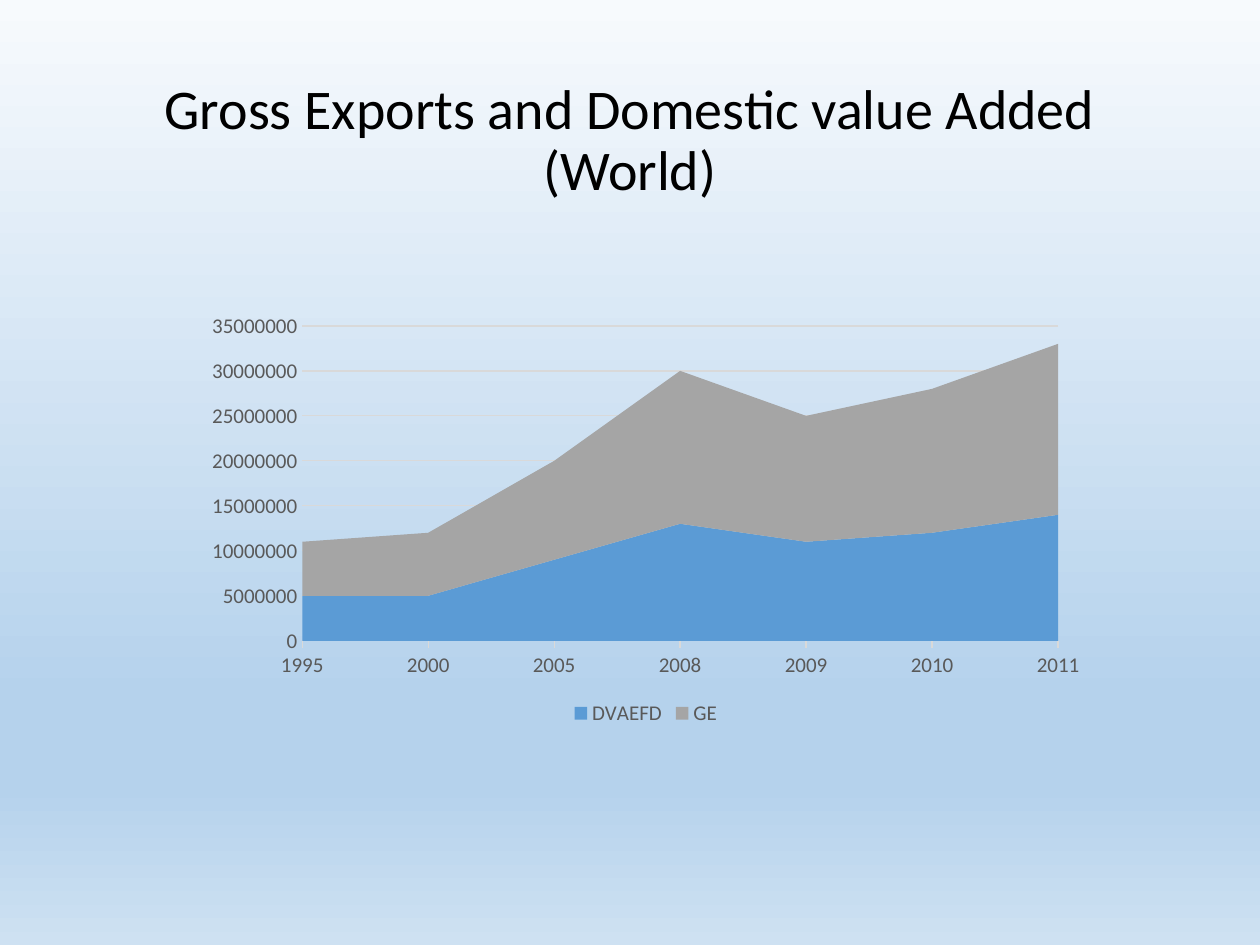
from lxml.etree import SubElement
from pptx import Presentation
from pptx.chart.data import CategoryChartData
from pptx.dml.color import RGBColor
from pptx.enum.chart import XL_CHART_TYPE as ChartType
from pptx.enum.chart import XL_LEGEND_POSITION as LegendPosition
from pptx.enum.chart import XL_TICK_MARK as TickMark
from pptx.enum.text import MSO_ANCHOR as Anchor
from pptx.enum.text import PP_ALIGN as Align
from pptx.oxml.ns import qn
from pptx.util import Inches, Pt

FONT = "Calibri"
LABEL_COLOR = "595959"
GRID_COLOR = "D9D9D9"
MILLION = 1_000_000
SKY_STOPS = [(0, "F7FAFD"), (74, "B5D2EC"), (83, "B5D2EC"), (100, "CEE1F2")]
YEARS = ["1995", "2000", "2005", "2008", "2009", "2010", "2011"]
EXPORTS = [
    ("DVAEFD", "5B9BD5", [5, 5, 9, 13, 11, 12, 14]),
    ("GE", "A5A5A5", [6, 7, 11, 17, 14, 16, 19]),
]


def color(hex_code):
    """Turn a hex string into a colour."""
    return RGBColor.from_string(hex_code)


def style_font(font, size, hex_code):
    """Set typeface, size and colour."""
    font.name = FONT
    font.size = Pt(size)
    font.color.rgb = color(hex_code)


def style_line(line, hex_code):
    """Give a chart line its colour and width."""
    line.color.rgb = color(hex_code)
    line.width = Pt(0.75)


def paint_background(slide, stops):
    """Fill the background with a gradient running from top to bottom."""
    fill = slide.background.fill
    fill.gradient()
    fill.gradient_angle = 270
    stop_list = slide.element.find(".//" + qn("a:gsLst"))
    for default_stop in list(stop_list):
        stop_list.remove(default_stop)
    for percent, hex_code in stops:
        stop = SubElement(stop_list, qn("a:gs"), pos=str(percent * 1000))
        SubElement(stop, qn("a:srgbClr"), val=hex_code)


def add_title(slide, text):
    """Add the centred slide title."""
    frame = slide.shapes.add_textbox(
        Inches(0.69), Inches(0.4), Inches(8.62), Inches(1.45)
    ).text_frame
    frame.word_wrap = True
    frame.vertical_anchor = Anchor.MIDDLE
    frame.text = text
    heading = frame.paragraphs[0]
    heading.alignment = Align.CENTER
    heading.line_spacing = 0.9
    style_font(heading.runs[0].font, 32, "000000")


def style_axes(chart):
    """Style both axes and start the areas on the value axis."""
    years, amounts = chart.category_axis, chart.value_axis
    for axis in (years, amounts):
        style_font(axis.tick_labels.font, 12, LABEL_COLOR)
        axis.minor_tick_mark = TickMark.NONE
    years.major_tick_mark = TickMark.OUTSIDE
    years.has_major_gridlines = False
    style_line(years.format.line, GRID_COLOR)
    amounts.major_tick_mark = TickMark.NONE
    amounts.minimum_scale = 0
    amounts.maximum_scale = 35 * MILLION
    amounts.major_unit = 5 * MILLION
    amounts.tick_labels.number_format = "General"
    amounts.tick_labels.number_format_is_linked = False
    amounts.format.line.fill.background()
    amounts.has_major_gridlines = True
    style_line(amounts.major_gridlines.format.line, GRID_COLOR)
    amounts._element.find(qn("c:crossBetween")).set("val", "midCat")


def add_exports_chart(slide):
    """Add the stacked area chart of exports."""
    data = CategoryChartData()
    data.categories = YEARS
    for name, _, millions in EXPORTS:
        data.add_series(name, [value * MILLION for value in millions])
    chart = slide.shapes.add_chart(
        ChartType.AREA_STACKED,
        Inches(1.54), Inches(2.42), Inches(7.17), Inches(3.38), data,
    ).chart
    style_font(chart.font, 10, "000000")
    chart.has_title = False
    chart.plots[0].vary_by_categories = False
    for series, (_, hex_code, _) in zip(chart.plots[0].series, EXPORTS):
        series.format.fill.solid()
        series.format.fill.fore_color.rgb = color(hex_code)
        series.format.line.fill.background()
    style_axes(chart)
    chart.has_legend = True
    chart.legend.position = LegendPosition.BOTTOM
    chart.legend.include_in_layout = False
    style_font(chart.legend.font, 12, LABEL_COLOR)


def main():
    """Build and save the slide."""
    deck = Presentation()
    deck.slide_width, deck.slide_height = Inches(10), Inches(7.5)
    slide = deck.slides.add_slide(deck.slide_layouts[6])
    paint_background(slide, SKY_STOPS)
    add_title(slide, "Gross Exports and Domestic value Added (World)")
    add_exports_chart(slide)
    deck.save("out.pptx")


if __name__ == "__main__":
    main()
